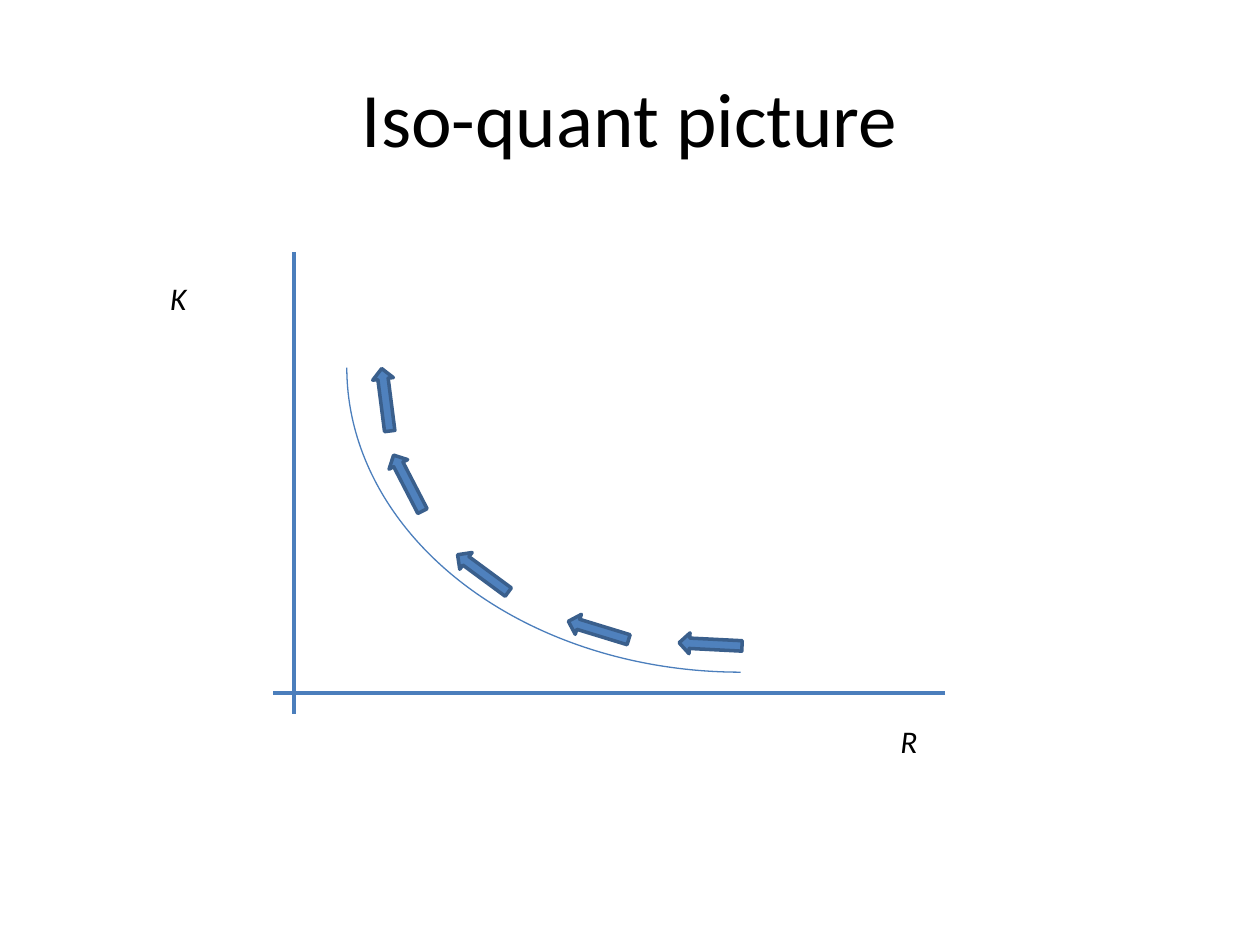
from pptx import Presentation
from pptx.dml.color import RGBColor
from pptx.enum.shapes import MSO_CONNECTOR as Connector, MSO_SHAPE as Shape
from pptx.enum.text import MSO_ANCHOR as Anchor, MSO_AUTO_SIZE as AutoSize, PP_ALIGN as Align
from pptx.oxml.ns import qn
from pptx.util import Cm, Pt
from lxml.etree import SubElement


def colour(hex_code):
    return RGBColor.from_string(hex_code)


class Diagram:
    """Holds the style and the current slide."""

    font = "Calibri"
    ink = "000000"
    stroke = "4B7EBC"
    arrow_fill = "4F81BD"
    arrow_edge = "3A5F8C"
    arrow_size = (1.27, 0.42)

    def __init__(self, slide):
        self.slide = slide

    def text(self, wording, left, top, width, height, size, italic=False,
             align=Align.LEFT, anchor=Anchor.TOP, fit=AutoSize.NONE):
        box = self.slide.shapes.add_textbox(Cm(left), Cm(top), Cm(width), Cm(height))
        frame = box.text_frame
        frame.word_wrap = True
        frame.auto_size = fit
        frame.vertical_anchor = anchor
        paragraph = frame.paragraphs[0]
        paragraph.alignment = align
        run = paragraph.add_run()
        run.text = wording
        run.font.name = self.font
        run.font.size = Pt(size)
        run.font.italic = italic
        run.font.color.rgb = colour(self.ink)

    def axis_label(self, wording, left, top):
        self.text(wording, left, top, 1.06, 1.03, 18, italic=True,
                  fit=AutoSize.SHAPE_TO_FIT_TEXT)

    def axis(self, x1, y1, x2, y2):
        line = self.slide.shapes.add_connector(
            Connector.STRAIGHT, Cm(x1), Cm(y1), Cm(x2), Cm(y2))
        self.outline(line, self.stroke, 2)
        SubElement(line._element.spPr, qn("a:effectLst"))

    def curve(self, left, top, width, height):
        arc = self.slide.shapes.add_shape(
            Shape.ARC, Cm(left), Cm(top), Cm(width), Cm(height))
        arc.rotation = 180
        arc.shadow.inherit = False
        arc.fill.background()
        self.outline(arc, self.stroke, 0.75)

    def arrow(self, left, top, angle):
        width, height = self.arrow_size
        arrow = self.slide.shapes.add_shape(
            Shape.LEFT_ARROW, Cm(left), Cm(top), Cm(width), Cm(height))
        arrow.rotation = angle
        arrow.shadow.inherit = False
        arrow.fill.solid()
        arrow.fill.fore_color.rgb = colour(self.arrow_fill)
        self.outline(arrow, self.arrow_edge, 2)

    def outline(self, shape, hex_code, width):
        shape.line.color.rgb = colour(hex_code)
        shape.line.width = Pt(width)


def main():
    deck = Presentation()
    deck.slide_width, deck.slide_height = Cm(25.4), Cm(19.05)
    diagram = Diagram(deck.slides.add_slide(deck.slide_layouts[6]))

    # Title
    diagram.text("Iso-quant picture", 1.27, 0.76, 22.86, 3.18, 44,
                 align=Align.CENTER, anchor=Anchor.MIDDLE)

    # Axes and their labels
    diagram.axis(5.93, 5.08, 5.93, 14.4)
    diagram.axis(19.05, 13.97, 5.5, 13.97)
    diagram.axis_label("K", 3.18, 5.5)
    diagram.axis_label("R", 17.9, 14.43)

    # Iso-quant
    diagram.curve(6.99, 1.27, 15.88, 12.28)

    # Movement along the iso-quant: left, top, angle
    substitution_steps = [
        (11.43, 12.5, 17),
        (13.69, 12.78, 2.9),
        (9.1, 11.35, 36.4),
        (7.59, 9.53, 62.7),
        (7.14, 7.85, 82.7),
    ]
    for step in substitution_steps:
        diagram.arrow(*step)

    deck.save("out.pptx")


if __name__ == "__main__":
    main()
